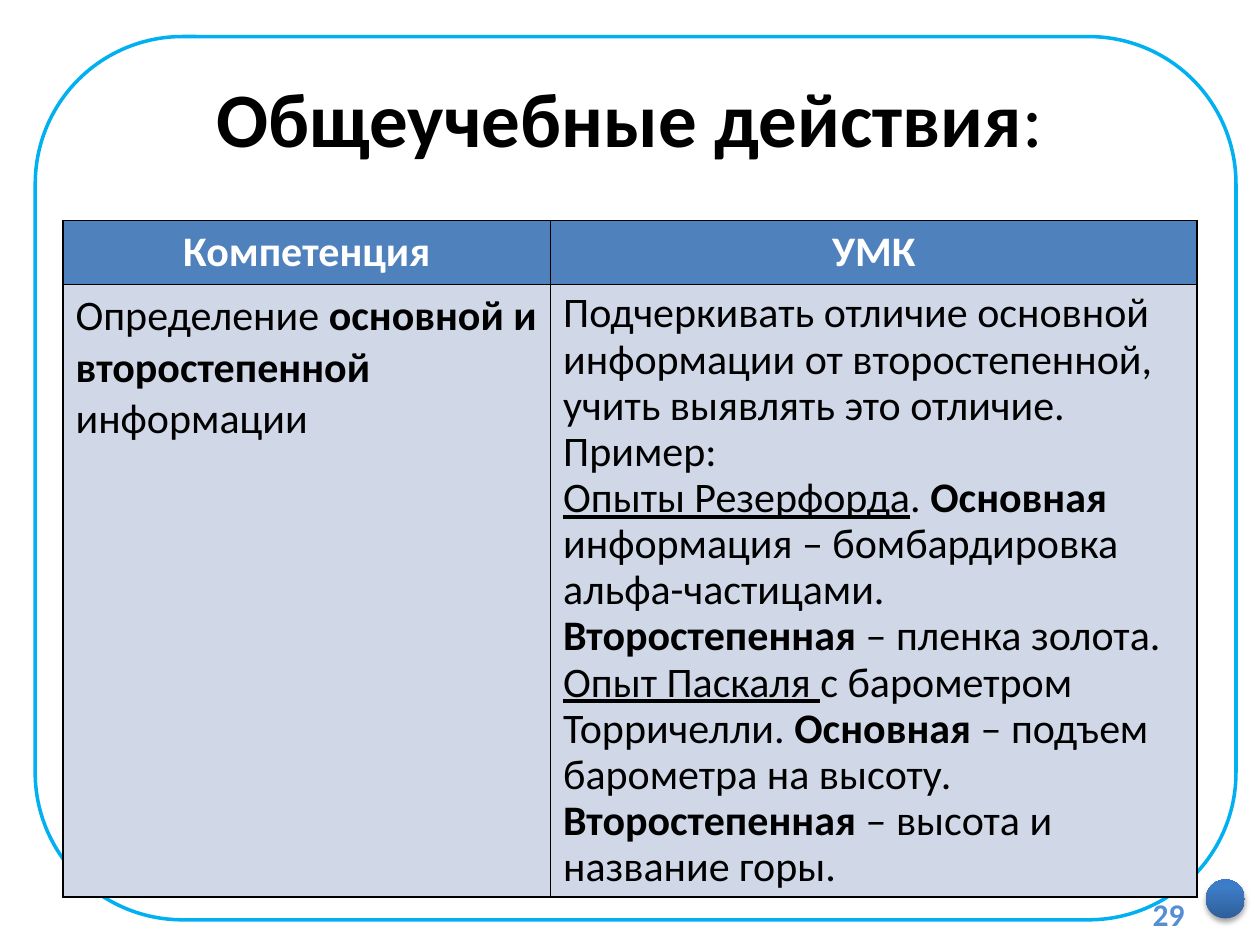
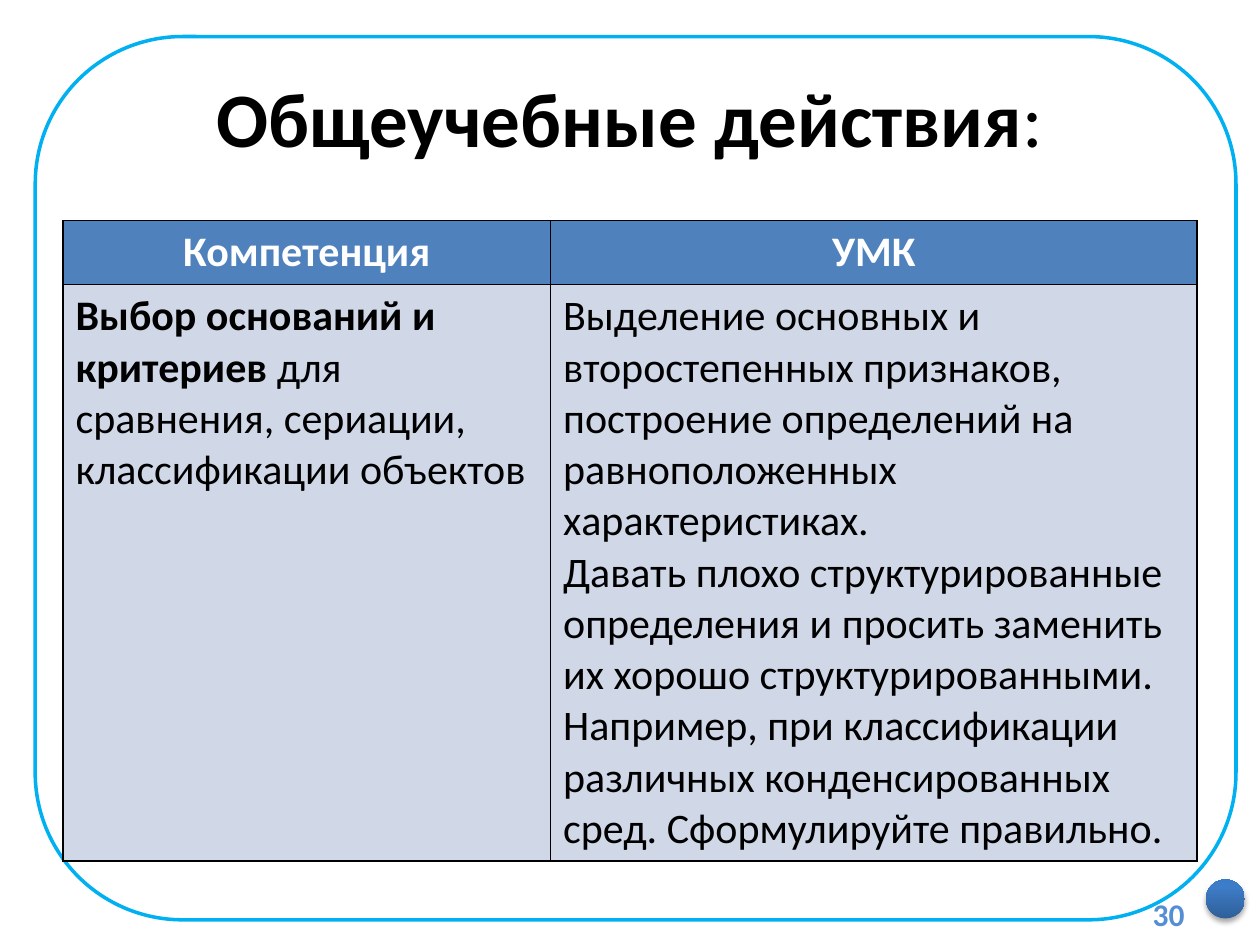
from dataclasses import dataclass
from copy import deepcopy

from lxml import etree
from pptx import Presentation
from pptx.dml.color import RGBColor
from pptx.enum import shapes, text
from pptx.oxml.ns import qn
from pptx.util import Inches, Pt

FONT = "Calibri"
BLACK, WHITE = "000000", "FFFFFF"
FRAME_LINE = "00B0F0"
HEADER_FILL, BODY_FILL = "4F81BD", "D0D8E8"
NUMBER_COLOR = "558ED5"
BALL_STOPS = [(0, "2F5F99"), (0.8, "3D7CC7"), (1, "3A7CCB")]
HEADINGS = ("Компетенция", "УМК")
COLUMN_WIDTHS = (3.87, 5.13)
HEADER_HEIGHT = 0.51


@dataclass(frozen=True)
class Span:
    text: str
    bold: bool = False
    underline: bool = False


@dataclass(frozen=True)
class Page:
    number: int
    competence: list[list[Span]]
    materials: list[list[Span]]
    body_height: float
    materials_spacing: float | None = None


TITLE = [Span("Общеучебные действия", bold=True), Span(":")]

PAGES = [
    Page(
        number=29,
        competence=[[
            Span("Определение "),
            Span("основной и второстепенной", bold=True),
            Span(" информации"),
        ]],
        materials=[
            [Span("Подчеркивать отличие основной информации от второстепенной, "
                  "учить выявлять это отличие.")],
            [Span("Пример:")],
            [
                Span("Опыты Резерфорда", underline=True),
                Span(". "),
                Span("Основная", bold=True),
                Span(" информация – бомбардировка альфа-частицами. "),
                Span("Второстепенная", bold=True),
                Span(" – пленка золота."),
            ],
            [
                Span("Опыт Паскаля ", underline=True),
                Span("с барометром Торричелли. "),
                Span("Основная", bold=True),
                Span(" – подъем барометра на высоту. "),
                Span("Второстепенная", bold=True),
                Span(" – высота и название горы."),
            ],
        ],
        body_height=4.77,
        materials_spacing=0.9,
    ),
    Page(
        number=30,
        competence=[[
            Span("Выбор оснований и критериев", bold=True),
            Span(" для сравнения, сериации, классификации объектов"),
        ]],
        materials=[
            [Span("Выделение основных и второстепенных признаков, построение "
                  "определений на равноположенных характеристиках.")],
            [Span("Давать плохо структурированные определения и просить "
                  "заменить их хорошо структурированными.")],
            [Span("Например, при классификации различных конденсированных "
                  "сред. Сформулируйте правильно.")],
        ],
        body_height=4.49,
    ),
]


def rgb(color: str) -> RGBColor:
    return RGBColor.from_string(color)


def box(left: float, top: float, width: float, height: float) -> tuple:
    return Inches(left), Inches(top), Inches(width), Inches(height)


def write(frame, paragraphs: list[list[Span]], size: float, color: str = BLACK,
          align=text.PP_ALIGN.LEFT, spacing: float | None = None) -> None:
    """Fill a text frame, one run for each span."""
    for index, spans in enumerate(paragraphs):
        paragraph = frame.add_paragraph() if index else frame.paragraphs[0]
        paragraph.alignment = align
        paragraph.line_spacing = spacing
        for span in spans:
            run = paragraph.add_run()
            run.text = span.text
            run.font.name = FONT
            run.font.size = Pt(size)
            run.font.bold = span.bold
            run.font.underline = span.underline
            run.font.color.rgb = rgb(color)


def add_frame(slide) -> None:
    frame = slide.shapes.add_shape(shapes.MSO_SHAPE.ROUNDED_RECTANGLE,
                                   *box(0.28, 0.29, 9.53, 7.01))
    frame.shadow.inherit = False
    frame.fill.background()
    frame.line.color.rgb = rgb(FRAME_LINE)
    frame.line.width = Pt(2)


def add_ball(slide) -> None:
    """Draw the shaded circle in the lower right corner."""
    ball = slide.shapes.add_shape(shapes.MSO_SHAPE.OVAL,
                                  *box(9.57, 6.98, 0.31, 0.31))
    ball.line.fill.background()
    ball.fill.gradient()
    ball.fill.gradient_angle = 90
    properties = ball._element.spPr
    last_stop = properties.findall(".//" + qn("a:gs"))[-1]
    last_stop.addnext(deepcopy(last_stop))
    for stop, (position, color) in zip(ball.fill.gradient_stops, BALL_STOPS):
        stop.position = position
        stop.color.rgb = rgb(color)

    ball.shadow.inherit = False
    effects = properties.find(qn("a:effectLst"))
    shadow = etree.SubElement(effects, qn("a:outerShdw"), blurRad=str(Pt(3.1)),
                              dist=str(Pt(1.8)), dir="5400000", rotWithShape="0")
    shade = etree.SubElement(shadow, qn("a:srgbClr"), val=BLACK)
    etree.SubElement(shade, qn("a:alpha"), val="35000")


def add_title(slide) -> None:
    title = slide.shapes.title
    title.left, title.top, title.width, title.height = box(0.5, 0.3, 9, 1.25)
    title.text_frame.vertical_anchor = text.MSO_ANCHOR.MIDDLE
    write(title.text_frame, [TITLE], 44, align=text.PP_ALIGN.CENTER)


def style_cell(cell, fill: str) -> None:
    """Set the fill and a thin black border on all four sides."""
    cell.fill.solid()
    cell.fill.fore_color.rgb = rgb(fill)
    properties = cell._tc.get_or_add_tcPr()
    for index, side in enumerate(("lnL", "lnR", "lnT", "lnB")):
        line = etree.Element(qn(f"a:{side}"), w=str(Pt(1)))
        solid = etree.SubElement(line, qn("a:solidFill"))
        etree.SubElement(solid, qn("a:srgbClr"), val=BLACK)
        properties.insert(index, line)


def add_competence_table(slide, page: Page) -> None:
    height = HEADER_HEIGHT + page.body_height
    table = slide.shapes.add_table(
        2, 2, *box(0.5, 1.75, sum(COLUMN_WIDTHS), height)).table
    table.rows[0].height = Inches(HEADER_HEIGHT)
    table.rows[1].height = Inches(page.body_height)
    bodies = ((page.competence, None), (page.materials, page.materials_spacing))
    for index, (heading, (paragraphs, spacing)) in enumerate(zip(HEADINGS, bodies)):
        table.columns[index].width = Inches(COLUMN_WIDTHS[index])
        header, body = table.cell(0, index), table.cell(1, index)
        style_cell(header, HEADER_FILL)
        style_cell(body, BODY_FILL)
        write(header.text_frame, [[Span(heading, bold=True)]], 24, WHITE,
              text.PP_ALIGN.CENTER)
        write(body.text_frame, paragraphs, 24, spacing=spacing)


def add_page_number(slide, number: int) -> None:
    frame = slide.shapes.add_textbox(*box(8.94, 7.05, 0.56, 0.4)).text_frame
    frame.word_wrap = True
    frame.vertical_anchor = text.MSO_ANCHOR.MIDDLE
    write(frame, [[Span(str(number), bold=True)]], 18, NUMBER_COLOR,
          text.PP_ALIGN.RIGHT)


def add_page(presentation, page: Page) -> None:
    title_only = presentation.slide_layouts[5]
    slide = presentation.slides.add_slide(title_only)
    add_frame(slide)
    add_ball(slide)
    add_title(slide)
    add_competence_table(slide, page)
    add_page_number(slide, page.number)


def main() -> None:
    presentation = Presentation()
    presentation.slide_width = Inches(10)
    presentation.slide_height = Inches(7.5)
    for page in PAGES:
        add_page(presentation, page)
    presentation.save("out.pptx")


if __name__ == "__main__":
    main()
